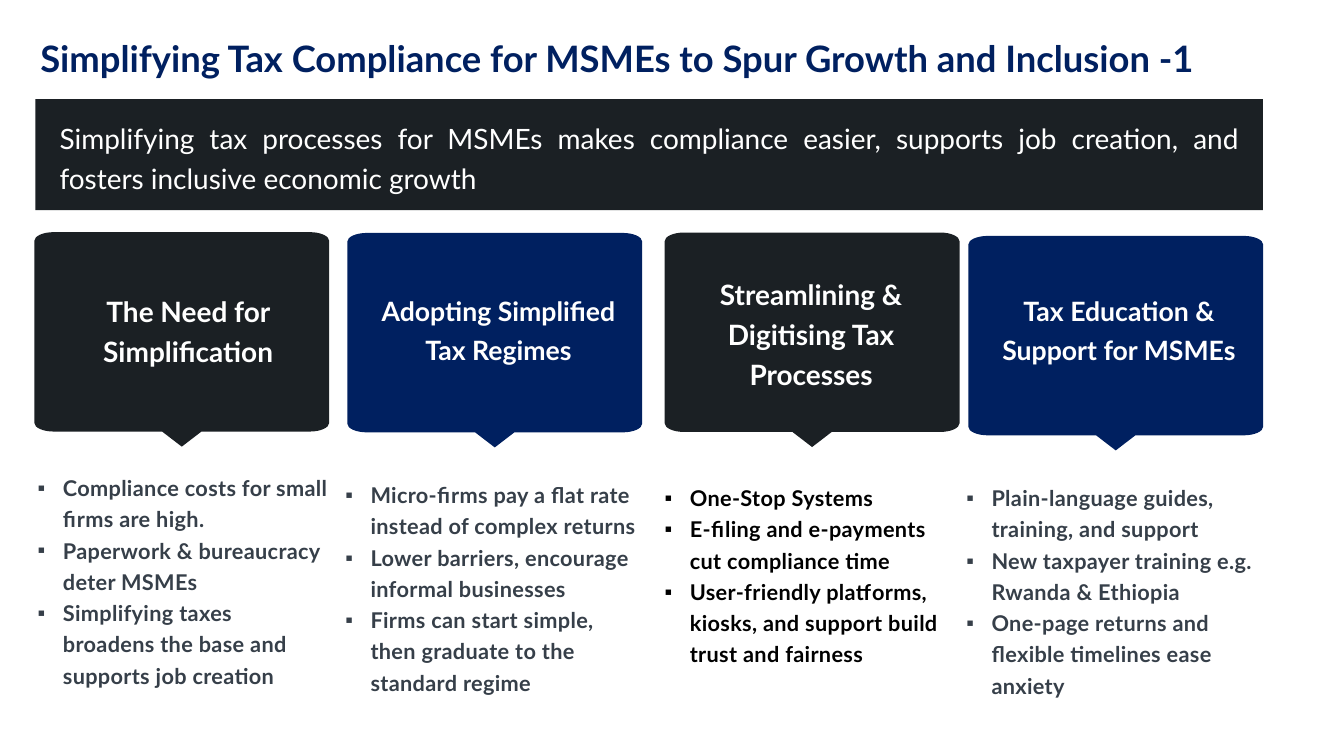
from dataclasses import dataclass

from lxml.etree import SubElement
from pptx import Presentation
from pptx.dml.color import RGBColor
from pptx.enum.shapes import MSO_SHAPE
from pptx.enum.text import MSO_ANCHOR, MSO_AUTO_SIZE, PP_ALIGN
from pptx.oxml.ns import qn
from pptx.util import Cm, Pt


@dataclass(frozen=True)
class Theme:
    font: str = "Lato"
    bullet_font: str = "Arial"
    navy: RGBColor = RGBColor(0x00, 0x20, 0x60)
    charcoal: RGBColor = RGBColor(0x1B, 0x20, 0x24)
    slate: RGBColor = RGBColor(0x36, 0x3F, 0x49)
    black: RGBColor = RGBColor(0, 0, 0)
    white: RGBColor = RGBColor(0xFF, 0xFF, 0xFF)
    title_size: int = 52
    lead_size: int = 40
    small_heading_size: int = 38
    bullet_size: int = 31


theme = Theme()


def add_run(paragraph, text, size, color, bold=True):
    run = paragraph.add_run()
    run.text = text
    run.font.name = theme.font
    run.font.size = Pt(size)
    run.font.bold = bold
    run.font.color.rgb = color
    return run


def add_text_box(slide, box, margin_x=0.25, margin_y=0.13):
    """Add a wrapping text box at box (left, top, width, height in cm)."""
    text_box = slide.shapes.add_textbox(*map(Cm, box))
    text_frame = text_box.text_frame
    text_frame.word_wrap = True
    text_frame.margin_left = text_frame.margin_right = Cm(margin_x)
    text_frame.margin_top = text_frame.margin_bottom = Cm(margin_y)
    return text_box


presentation = Presentation()
presentation.slide_width = Cm(67.72)
presentation.slide_height = Cm(38.1)
slide = presentation.slides.add_slide(presentation.slide_layouts[5])

# Title
title = slide.shapes.title
title.left, title.top, title.width, title.height = map(Cm, (1.78, 1.68, 62.2, 2.49))
title.text_frame.auto_size = MSO_AUTO_SIZE.NONE
title.text_frame.vertical_anchor = MSO_ANCHOR.TOP
paragraph = title.text_frame.paragraphs[0]
paragraph.alignment = PP_ALIGN.LEFT
add_run(paragraph, "Simplifying Tax Compliance for MSMEs to Spur Growth and Inclusion -1",
        theme.title_size, theme.navy)

# Lead statement on a dark band
band = slide.shapes.add_shape(MSO_SHAPE.RECTANGLE, Cm(1.78), Cm(5), Cm(61.85), Cm(5.59))
band.shadow.inherit = False
band.line.fill.background()
lead = add_text_box(slide, (2.75, 5.66, 59.92, 4.14))
for shape in (band, lead):
    shape.fill.solid()
    shape.fill.fore_color.rgb = theme.charcoal
paragraph = lead.text_frame.paragraphs[0]
paragraph.alignment = PP_ALIGN.JUSTIFY
paragraph.line_spacing = 1.2
add_run(paragraph, "Simplifying tax processes for MSMEs makes compliance easier, supports job "
        "creation, and fosters inclusive economic growth",
        theme.lead_size, theme.white, bold=False)

# Outline shared by the four cards: rounded body with a pointer below
card_width, body_height, pointer_height, pointer_half = 14.86, 10.05, 0.76, 0.99
radius_x, radius_y, curve_pull = 0.98, 0.44, 0.55
middle, right_bend, bottom_bend = card_width / 2, card_width - radius_x, body_height - radius_y
outline = [
    (radius_x, 0), (0, radius_y),
    (0, bottom_bend), (radius_x, body_height),
    (middle - pointer_half, body_height),
    (middle, body_height + pointer_height),
    (middle + pointer_half, body_height),
    (right_bend, body_height), (card_width, bottom_bend),
    (card_width, radius_y), (right_bend, 0),
]
# Index of the outline point that ends each rounded corner, and the corner itself
corners = {1: (0, 0), 3: (0, body_height), 8: (card_width, body_height), 10: (card_width, 0)}

# Card position, fill, heading, heading size and box, bullet colour and box, bullets
columns = [
    ((1.73, 11.7), theme.charcoal,
     "The Need for Simplification", theme.lead_size, (3.56, 14.38, 11.84, 4.14),
     theme.slate, (1.9, 23.67, 14.63, 10.97),
     ["Compliance costs for small firms are high.",
      "Paperwork & bureaucracy deter MSMEs",
      "Simplifying taxes broadens the base and supports job creation"]),
    ((17.5, 11.74), theme.navy,
     "Adopting Simplified Tax Regimes", theme.small_heading_size, (18.92, 14.43, 12.4, 3.96),
     theme.slate, (17.4, 24.03, 14.86, 10.97),
     ["Micro-firms pay a flat rate instead of complex returns",
      "Lower barriers, encourage informal businesses",
      "Firms can start simple, then graduate to the standard regime"]),
    ((33.49, 11.72), theme.charcoal,
     "Streamlining & Digitising Tax Processes", theme.lead_size, (33.76, 13.51, 14.22, 6.2),
     theme.black, (33.49, 24.18, 14.5, 9.37),
     ["One-Stop Systems",
      "E-filing and e-payments cut compliance time",
      "User-friendly platforms, kiosks, and support build trust and fairness"]),
    ((48.79, 11.89), theme.navy,
     "Tax Education & Support for MSMEs", theme.small_heading_size, (49.96, 14.43, 12.85, 3.96),
     theme.slate, (48.69, 24.18, 15.9, 10.97),
     ["Plain-language guides, training, and support",
      "New taxpayer training e.g. Rwanda & Ethiopia",
      "One-page returns and flexible timelines ease anxiety"]),
]

for (left, top), fill, heading, heading_size, heading_box, bullet_color, bullet_box, bullets in columns:
    points = [(Cm(left + x), Cm(top + y)) for x, y in outline]
    builder = slide.shapes.build_freeform(*points[0])
    builder.add_line_segments(points[1:], close=True)
    card = builder.convert_to_shape()
    card.shadow.inherit = False
    card.fill.solid()
    card.fill.fore_color.rgb = fill
    card.line.fill.background()

    # Bend the straight corner segments into curves
    segments = list(card._element.spPr.find(".//" + qn("a:path")))
    for index, corner in corners.items():
        segment = segments[index]
        curve = segment.makeelement(qn("a:cubicBezTo"), {})
        for end in (outline[index - 1], outline[index]):
            x, y = (a + (b - a) * curve_pull for a, b in zip(end, corner))
            SubElement(curve, qn("a:pt"), x=str(Cm(x)), y=str(Cm(y)))
        curve.append(segment[0])
        segment.getparent().replace(segment, curve)

    paragraph = add_text_box(slide, heading_box).text_frame.paragraphs[0]
    paragraph.alignment = PP_ALIGN.CENTER
    paragraph.line_spacing = 1.2
    add_run(paragraph, heading, heading_size, theme.white)

    text_frame = add_text_box(slide, bullet_box, margin_x=0, margin_y=0).text_frame
    for index, bullet in enumerate(bullets):
        paragraph = text_frame.add_paragraph() if index else text_frame.paragraphs[0]
        paragraph.line_spacing = 1.2
        properties = paragraph._p.get_or_add_pPr()
        properties.set("marL", str(Cm(1.27)))
        properties.set("indent", str(-Cm(1.27)))
        SubElement(properties, qn("a:buFont"), typeface=theme.bullet_font)
        SubElement(properties, qn("a:buChar"), char="▪")
        run = add_run(paragraph, bullet, theme.bullet_size, bullet_color)
        run.font._element.set("spc", "50")

presentation.save("out.pptx")
